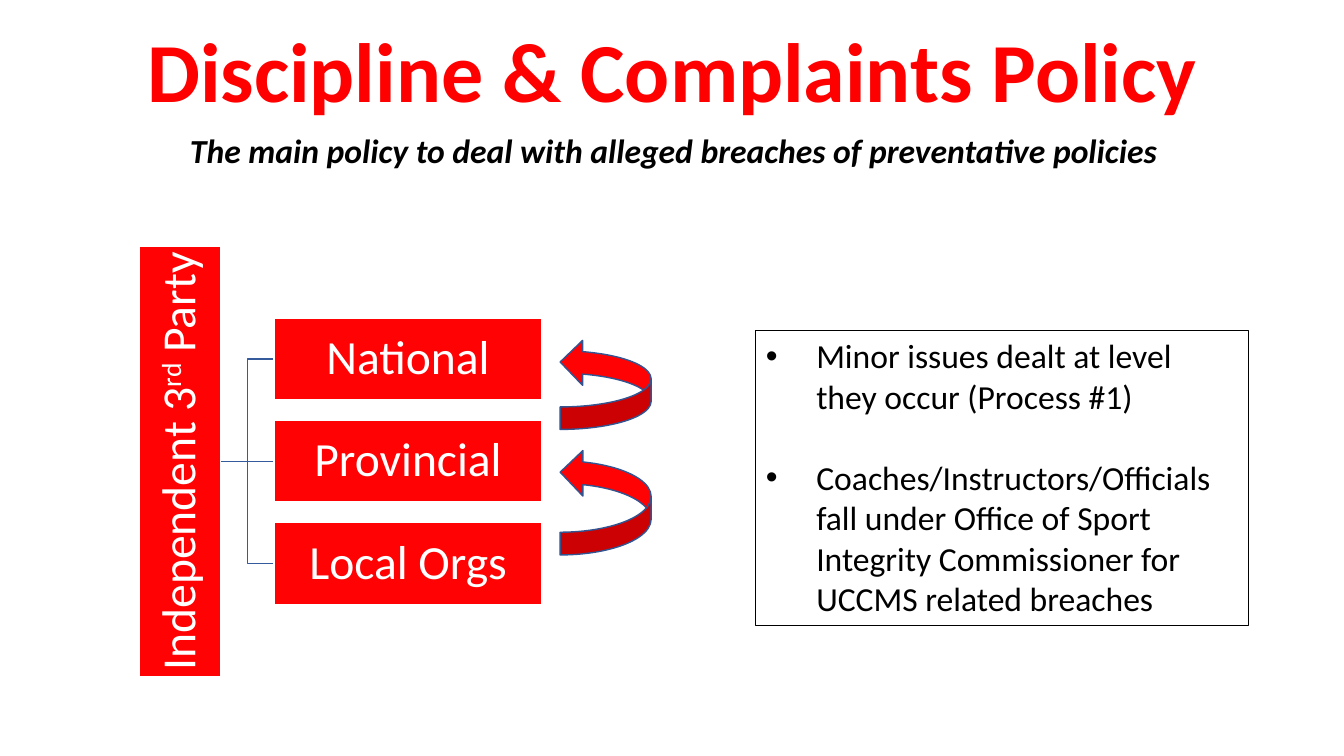
from lxml.etree import SubElement
from pptx import Presentation
from pptx.dml.color import RGBColor
from pptx.enum.shapes import MSO_CONNECTOR as Connector, MSO_SHAPE as Shape
from pptx.enum.text import MSO_ANCHOR as Anchor, PP_ALIGN as Align
from pptx.oxml.ns import qn
from pptx.util import Pt

RED, WHITE, BLACK = "FF0204", "FFFFFF", "000000"
LINK_BLUE, ARROW_BLUE = "365B9D", "325491"


def color(value):
    return RGBColor.from_string(value)


class PolicySlide:
    """Draws styled elements on one slide, with lengths in points."""

    font = "Calibri"

    def __init__(self, presentation):
        self.slide = presentation.slides.add_slide(presentation.slide_layouts[6])
        self.shapes = self.slide.shapes

    def style_line(self, shape, line, width=1):
        shape.line.color.rgb = color(line)
        shape.line.width = Pt(width)

    def style_text(self, paragraph, size, ink, bold=False, italic=False):
        for run in paragraph.runs:
            run.font.name, run.font.size = self.font, Pt(size)
            run.font.bold, run.font.italic = bold, italic
            run.font.color.rgb = color(ink)

    def heading(self, text, left, top, width, height, size, ink, italic=False):
        shape = self.shapes.add_textbox(Pt(left), Pt(top), Pt(width), Pt(height))
        shape.text_frame.word_wrap = True
        shape.text_frame.text = text
        paragraph = shape.text_frame.paragraphs[0]
        paragraph.alignment = Align.CENTER
        self.style_text(paragraph, size, ink, True, italic)

    def block(self, kind, left, top, width, height, fill, line, rotation=0, line_width=1):
        shape = self.shapes.add_shape(kind, Pt(left), Pt(top), Pt(width), Pt(height))
        shape.shadow.inherit = False
        shape.rotation = rotation
        if fill:
            shape.fill.solid()
            shape.fill.fore_color.rgb = color(fill)
        else:
            shape.fill.background()
        self.style_line(shape, line, line_width)
        return shape

    def level(self, parts, left, top, width, height, rotation=0):
        shape = self.block(Shape.RECTANGLE, left, top, width, height, RED, WHITE, rotation)
        frame = shape.text_frame
        frame.word_wrap = True
        frame.vertical_anchor = Anchor.MIDDLE
        frame.margin_left = frame.margin_right = Pt(1.5)
        frame.margin_top = frame.margin_bottom = Pt(1.5)
        paragraph = frame.paragraphs[0]
        paragraph.alignment = Align.CENTER
        paragraph.line_spacing = 0.9
        for index, part in enumerate(parts):
            run = paragraph.add_run()
            run.text = part
            if index == 1:
                run._r.get_or_add_rPr().set("baseline", "30000")
        self.style_text(paragraph, 34, WHITE)

    def link(self, start_x, start_y, end_x, end_y):
        if start_y == end_y:
            shape = self.shapes.add_connector(
                Connector.STRAIGHT, Pt(start_x), Pt(start_y), Pt(end_x), Pt(end_y))
            SubElement(shape._element.spPr, qn("a:effectLst"))
        else:
            middle = (start_x + end_x) / 2
            corners = [(middle, start_y), (middle, end_y), (end_x, end_y)]
            builder = self.shapes.build_freeform(Pt(start_x), Pt(start_y))
            builder.add_line_segments([(Pt(x), Pt(y)) for x, y in corners], close=False)
            shape = builder.convert_to_shape()
            shape.shadow.inherit = False
            shape.fill.background()
        self.style_line(shape, LINK_BLUE)

    def bullet_box(self, items, left, top, width, height, size, gap):
        shape = self.block(Shape.RECTANGLE, left, top, width, height, None, BLACK, line_width=0.75)
        frame = shape.text_frame
        frame.word_wrap = True
        frame.vertical_anchor = Anchor.TOP
        frame.text = "\n".join(items)
        for index, paragraph in enumerate(frame.paragraphs):
            paragraph.alignment = Align.LEFT
            paragraph.space_before = Pt(gap if index else 0)
            properties = paragraph._p.get_or_add_pPr()
            properties.set("marL", str(Pt(36)))
            properties.set("indent", str(Pt(-36)))
            SubElement(properties, qn("a:buFont")).set("typeface", "Arial")
            SubElement(properties, qn("a:buChar")).set("char", "•")
            self.style_text(paragraph, size, BLACK)


def main():
    presentation = Presentation()
    presentation.slide_width, presentation.slide_height = Pt(960), Pt(540)
    policy = PolicySlide(presentation)

    policy.heading("Discipline & Complaints Policy", 16.5, 9.4, 927.4, 80, 60, "FF0000")
    policy.bullet_box(
        ["Minor issues dealt at level they occur (Process #1)",
         "Coaches/Instructors/Officials fall under Office of Sport Integrity "
         "Commissioner for UCCMS related breaches"],
        540, 236, 352, 211, 24, 29.3)

    center_y, step = 329.5, 73.1
    level_left, level_width, bar = 195.8, 191.5, 58.4
    party_x, party_length = 128.5, 307.4
    levels = ["National", "Provincial", "Local Orgs"]
    rows = [(name, center_y + (index - 1) * step) for index, name in enumerate(levels)]
    for name, row_y in rows:
        policy.link(party_x + bar / 2, center_y, level_left, row_y)
    policy.level(["Independent 3", "rd", " Party"], party_x - party_length / 2,
                 center_y - bar / 2, party_length, bar, 270)
    for name, row_y in rows:
        policy.level([name], level_left, row_y - bar / 2, level_width, bar)

    arrow_x, arrow_depth = 432.6, 65
    for arrow_y, arrow_length in [(358.7, 75.4), (274.6, 64.2)]:
        policy.block(Shape.CURVED_UP_ARROW, arrow_x - arrow_length / 2,
                     arrow_y - arrow_depth / 2, arrow_length, arrow_depth,
                     RED, ARROW_BLUE, 270)

    policy.heading("The main policy to deal with alleged breaches of preventative policies",
                   78, 89.3, 806.4, 36, 24, BLACK, True)
    presentation.save("out.pptx")


if __name__ == "__main__":
    main()
